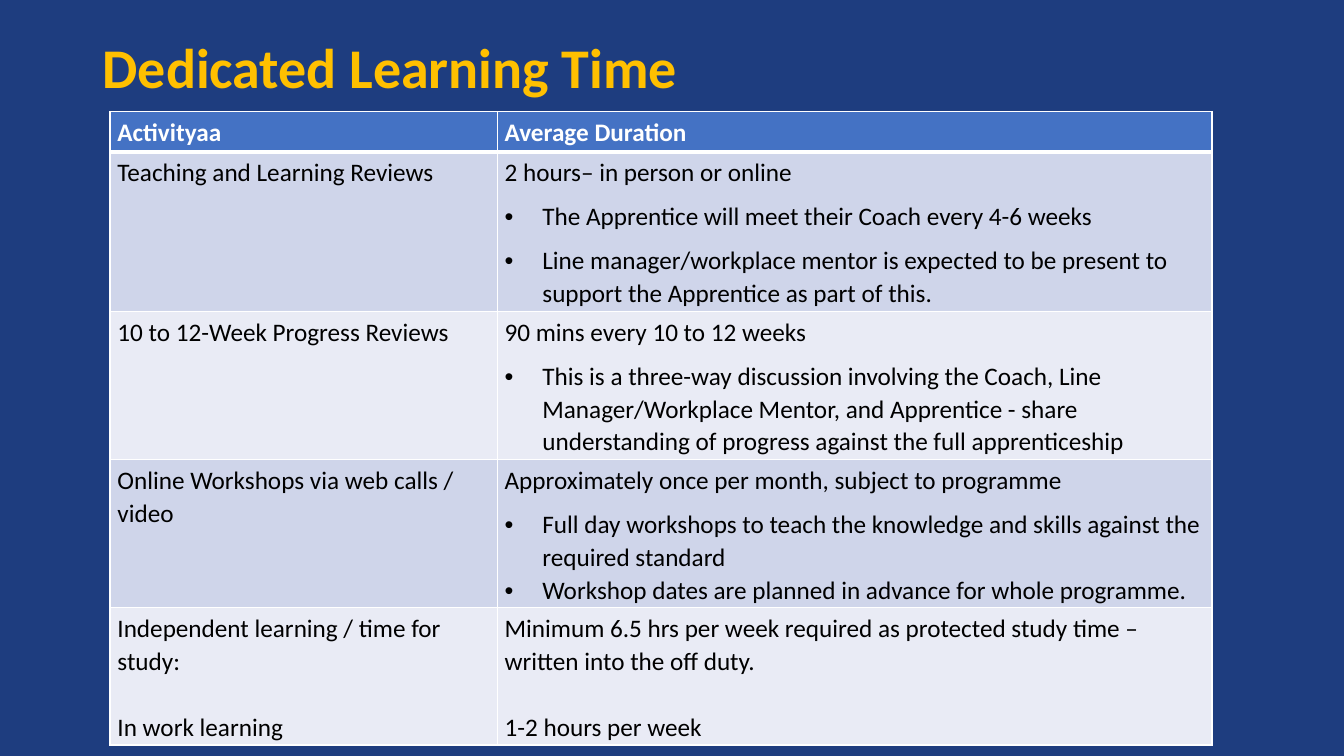
"""Build the Dedicated Learning Time slide with its table of activities."""
from dataclasses import dataclass

from lxml import etree
from pptx import Presentation
from pptx import util as u
from pptx.dml import color
from pptx.enum import text
from pptx.oxml import ns


@dataclass(frozen=True)
class Theme:
    back: str = "1E3D7F"
    gold: str = "FFC000"
    head: str = "4472C4"
    bands: tuple[str, str] = ("CFD5EA", "E9EBF5")
    white: str = "FFFFFF"
    black: str = "000000"
    face: str = "Calibri"
    title: int = 40
    body: int = 18
    thin: int = 1
    thick: int = 3
    gap: int = 8
    line: float = 23.5


@dataclass(frozen=True)
class Para:
    words: str
    dot: bool = False
    after: float = Theme.gap
    before: float = 0


@dataclass(frozen=True)
class Row:
    share: float
    name: tuple[Para, ...]
    time: tuple[Para, ...]


LOOK = Theme()
WIDE, HIGH = u.Inches(13.33), u.Inches(7.5)
COLS = (28.81, 53.19)
ROWS = (
    Row(4.8, (Para("Activityaa"),), (Para("Average Duration"),)),
    Row(19.47, (Para("Teaching and Learning Reviews"),), (
        Para("2 hours– in person or online"),
        Para("The Apprentice will meet their Coach every 4-6 weeks", True),
        Para("Line manager/workplace mentor is expected to be present to "
             "support the Apprentice as part of this.", True))),
    Row(18, (Para("10 to 12-Week Progress Reviews"),), (
        Para("90 mins every 10 to 12 weeks"),
        Para("This is a three-way discussion involving the Coach, Line "
             "Manager/Workplace Mentor, and Apprentice - share understanding "
             "of progress against the full apprenticeship", True))),
    Row(18, (Para("Online Workshops via web calls / video"),), (
        Para("Approximately once per month, subject to programme"),
        Para("Full day workshops to teach the knowledge and skills against "
             "the required standard", True, 0),
        Para("Workshop dates are planned in advance for whole programme.",
             True))),
    Row(17.73, (
        Para("Independent learning / time for study:", after=0),
        Para("In work learning", after=0, before=LOOK.line)), (
        Para("Minimum 6.5 hrs per week required as protected study time – "
             "written into the off duty.", after=0),
        Para("1-2 hours per week", after=0, before=LOOK.line))),
)


def across(share: float) -> int:
    """Return a percentage of the slide's width."""
    return u.Emu(int(WIDE * share / 100))


def down(share: float) -> int:
    """Return a percentage of the slide's height."""
    return u.Emu(int(HIGH * share / 100))


def ink(code: str) -> color.RGBColor:
    """Return the colour for a hex code."""
    return color.RGBColor.from_string(code)


def style(para, size: int, tint: str, bold: bool) -> None:
    """Format every run of a paragraph."""
    for run in para.runs:
        font = run.font
        font.name, font.size, font.bold = LOOK.face, u.Pt(size), bold
        font.color.rgb = ink(tint)


def bullet(para) -> None:
    """Give a paragraph a hanging round bullet."""
    props = para._p.get_or_add_pPr()
    indent = across(2.81)
    props.set("marL", str(indent))
    props.set("indent", str(-indent))
    etree.SubElement(props, ns.qn("a:buFont"), typeface="Arial")
    etree.SubElement(props, ns.qn("a:buChar"), char="•")


def write(frame, paras: tuple[Para, ...], tint: str, bold: bool) -> None:
    """Fill a table cell's text frame."""
    for spot, item in enumerate(paras):
        para = frame.add_paragraph() if spot else frame.paragraphs[0]
        para.text = item.words
        para.line_spacing = 1.07
        para.space_after = u.Pt(item.after)
        if item.before:
            para.space_before = u.Pt(item.before)
        if item.dot:
            bullet(para)
        style(para, LOOK.body, tint, bold)


def border(cell, index: int) -> None:
    """Draw white cell edges, thick below the header."""
    props = cell._tc.get_or_add_tcPr()
    heavy = {0: "B", 1: "T"}.get(index)
    for side in "LRTB":
        width = LOOK.thick if side == heavy else LOOK.thin
        edge = etree.SubElement(props, ns.qn(f"a:ln{side}"), w=str(u.Pt(width)))
        fill = etree.SubElement(edge, ns.qn("a:solidFill"))
        etree.SubElement(fill, ns.qn("a:srgbClr"), val=LOOK.white)


def heading(slide) -> None:
    """Add the slide's title."""
    box = slide.shapes.add_textbox(
        across(6.9), down(3.47), across(86.27), down(11.73))
    frame = box.text_frame
    frame.word_wrap = True
    frame.vertical_anchor = text.MSO_ANCHOR.MIDDLE
    frame.text = "Dedicated Learning Time"
    para = frame.paragraphs[0]
    para.line_spacing = 0.9
    style(para, LOOK.title, LOOK.gold, True)


def grid(slide) -> None:
    """Add the table of activities."""
    table = slide.shapes.add_table(
        len(ROWS), len(COLS), across(8.18), down(14.8),
        across(sum(COLS)), down(82.8)).table
    table.horz_banding = False
    for col, share in zip(table.columns, COLS):
        col.width = across(share)
    for index, row in enumerate(ROWS):
        table.rows[index].height = down(row.share)
        top = index == 0
        shade = LOOK.head if top else LOOK.bands[(index - 1) % 2]
        for col, paras in enumerate((row.name, row.time)):
            cell = table.cell(index, col)
            cell.margin_left = cell.margin_right = across(0.56)
            cell.margin_top = cell.margin_bottom = down(0.5)
            border(cell, index)
            cell.fill.solid()
            cell.fill.fore_color.rgb = ink(shade)
            write(cell.text_frame, paras,
                  LOOK.white if top else LOOK.black, top)


def main() -> None:
    """Build and save the deck."""
    deck = Presentation()
    deck.slide_width, deck.slide_height = WIDE, HIGH
    slide = deck.slides.add_slide(deck.slide_layouts[6])
    slide.background.fill.solid()
    slide.background.fill.fore_color.rgb = ink(LOOK.back)
    heading(slide)
    grid(slide)
    deck.save("out.pptx")


if __name__ == "__main__":
    main()
